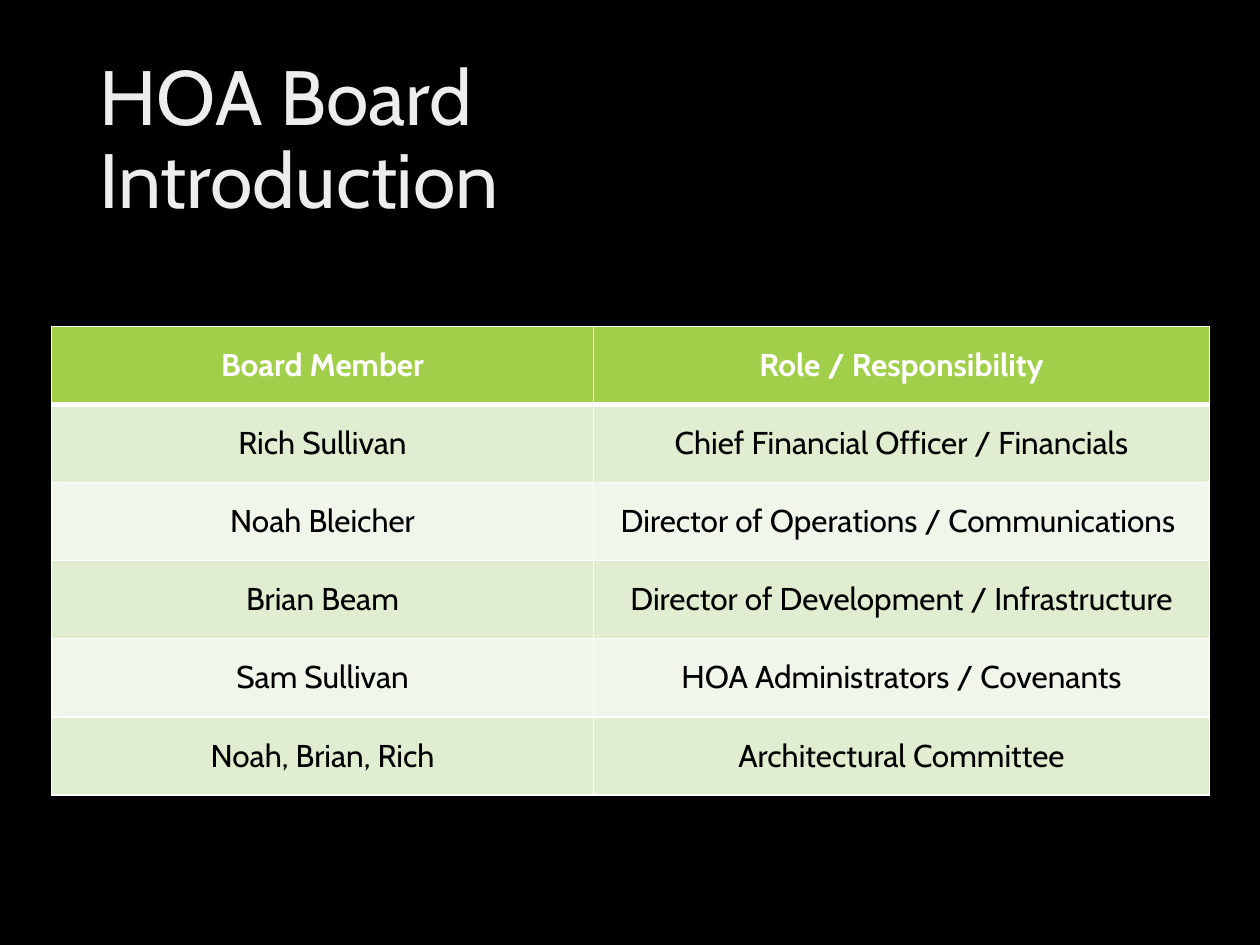
"""Build the HOA board introduction slide with its table of members and roles."""
import pptx
import pptx.dml.color
import pptx.enum.text
import pptx.oxml
import pptx.oxml.ns
import pptx.util

Inches = pptx.util.Inches
Pt = pptx.util.Pt
RGBColor = pptx.dml.color.RGBColor

BLACK = RGBColor(0x00, 0x00, 0x00)
WHITE = RGBColor(0xFF, 0xFF, 0xFF)
SILVER = RGBColor(0xED, 0xED, 0xED)
GREEN = RGBColor(0xA2, 0xCF, 0x49)
LIGHT_GREEN = RGBColor(0xE0, 0xED, 0xD0)
PALE_GREEN = RGBColor(0xF0, 0xF6, 0xE9)

FONT = "Cabin"
MIDDLE = pptx.enum.text.MSO_ANCHOR.MIDDLE
COLUMN_WIDTHS = (4.3, 4.89)
ROW_HEIGHT = 0.62
BOARD = (
    ("Board Member", "Role / Responsibility"),
    ("Rich Sullivan", "Chief Financial Officer / Financials"),
    ("Noah Bleicher", "Director of Operations / Communications "),
    ("Brian Beam", "Director of Development / Infrastructure"),
    ("Sam Sullivan", "HOA Administrators / Covenants"),
    ("Noah, Brian, Rich", "Architectural Committee"),
)


def format_runs(para, size, color, bold=False):
    for span in para.runs:
        span.font.name = FONT
        span.font.size = Pt(size)
        span.font.bold = bold
        span.font.color.rgb = color


def set_title(page, text):
    title = page.shapes.title
    title.left, title.top = Inches(0.69), Inches(0.4)
    title.width, title.height = Inches(8.62), Inches(1.45)
    frame = title.text_frame
    frame.text = text
    frame.word_wrap = True
    frame.auto_size = pptx.enum.text.MSO_AUTO_SIZE.NONE
    frame.vertical_anchor = MIDDLE
    para = frame.paragraphs[0]
    para.alignment = pptx.enum.text.PP_ALIGN.LEFT
    para.line_spacing = 0.9
    format_runs(para, 44, SILVER)


def set_borders(cell, widths):
    properties = cell._tc.get_or_add_tcPr()
    for side, width in widths.items():
        properties.append(pptx.oxml.parse_xml(
            f'<a:ln{side} {pptx.oxml.ns.nsdecls("a")} w="{Pt(width)}">'
            f'<a:solidFill><a:srgbClr val="{WHITE}"/></a:solidFill></a:ln{side}>'
        ))


def fill_cell(cell, text, row):
    header = row == 0
    set_borders(cell, {
        "L": 1, "R": 1, "T": 3 if row == 1 else 1, "B": 3 if header else 1,
    })
    cell.fill.solid()
    band = LIGHT_GREEN if row % 2 else PALE_GREEN
    cell.fill.fore_color.rgb = GREEN if header else band
    cell.vertical_anchor = MIDDLE
    cell.text_frame.text = text
    para = cell.text_frame.paragraphs[0]
    para.alignment = pptx.enum.text.PP_ALIGN.CENTER
    format_runs(para, 18, WHITE if header else BLACK, header)


def add_board_table(page):
    table = page.shapes.add_table(
        len(BOARD), len(COLUMN_WIDTHS), Inches(0.41), Inches(2.59),
        Inches(sum(COLUMN_WIDTHS)), Inches(ROW_HEIGHT * len(BOARD)),
    ).table
    for column, width in zip(table.columns, COLUMN_WIDTHS):
        column.width = Inches(width)
    for row, texts in enumerate(BOARD):
        table.rows[row].height = Inches(ROW_HEIGHT)
        for column, text in enumerate(texts):
            fill_cell(table.cell(row, column), text, row)


def main():
    deck = pptx.Presentation()
    deck.slide_width, deck.slide_height = Inches(10), Inches(7.5)
    page = deck.slides.add_slide(deck.slide_layouts[5])
    page.background.fill.solid()
    page.background.fill.fore_color.rgb = BLACK
    set_title(page, "HOA Board\vIntroduction")
    add_board_table(page)
    deck.save("out.pptx")


if __name__ == "__main__":
    main()
